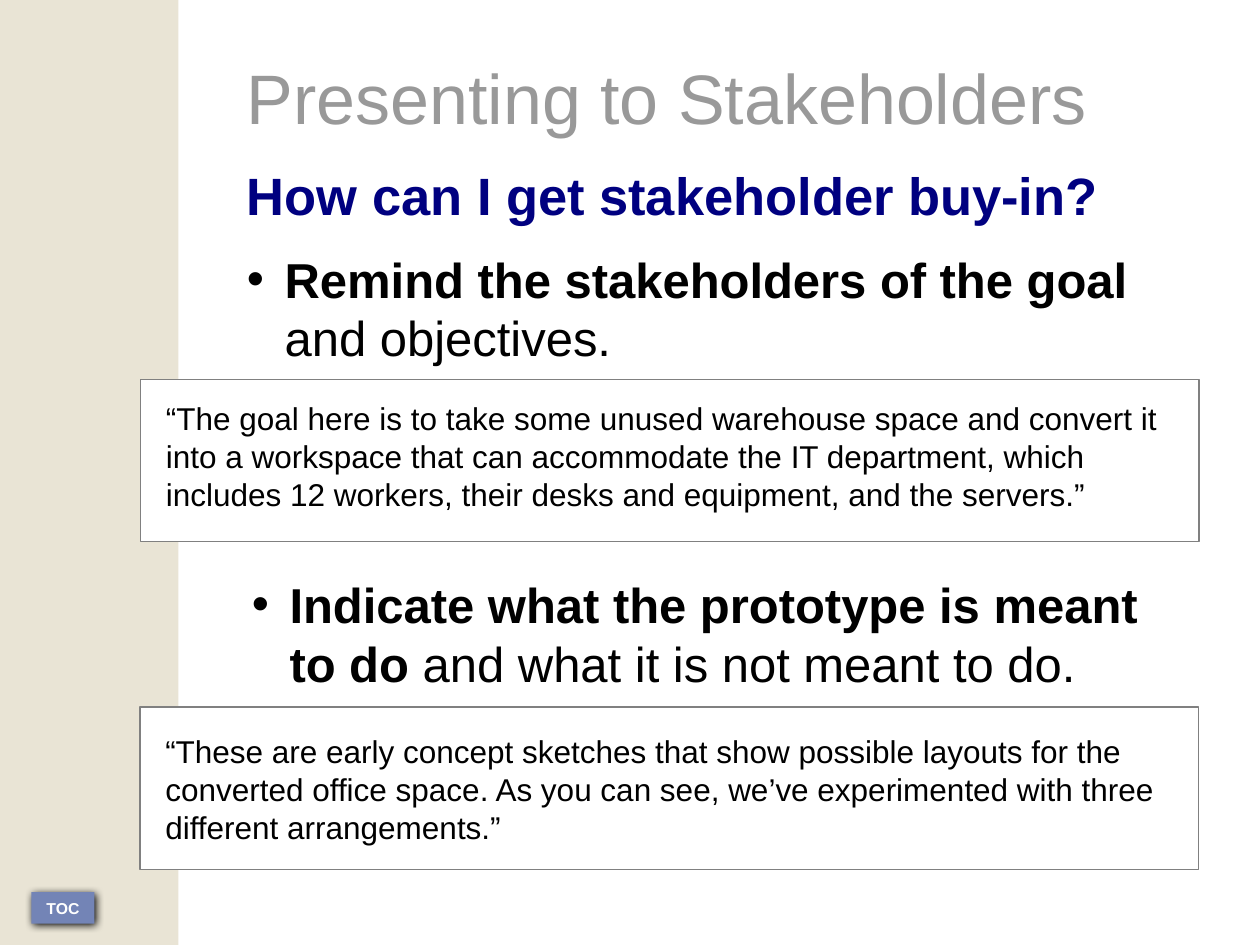
from lxml.etree import SubElement
from pptx import Presentation
from pptx.dml.color import RGBColor
from pptx.enum.shapes import MSO_SHAPE as Shape
from pptx.enum.text import MSO_ANCHOR as Anchor, PP_ALIGN as Align
from pptx.oxml.ns import qn
from pptx.util import Pt

WHITE = RGBColor(0xFF, 0xFF, 0xFF)
BLACK = RGBColor(0, 0, 0)
SAND = RGBColor(0xE9, 0xE4, 0xD5)
SLATE = RGBColor(0x73, 0x84, 0xB6)
GRAY = RGBColor(0x99, 0x99, 0x99)
BORDER = RGBColor(0x80, 0x80, 0x80)
NAVY = RGBColor(0, 0, 0x80)
FONT = "Arial"
INDENT = Pt(21.6)


def add_panel(page, kind, box, fill, border=None):
    """Add a flat filled shape, with a thin border if a colour is given."""
    panel = page.shapes.add_shape(kind, *map(Pt, box))
    panel.shadow.inherit = False
    panel.fill.solid()
    panel.fill.fore_color.rgb = fill
    if border is None:
        panel.line.fill.background()
    else:
        panel.line.color.rgb = border
        panel.line.width = Pt(0.71)
    return panel


def add_text_frame(page, box):
    """Add a wrapping text box and return its frame."""
    frame = page.shapes.add_textbox(*map(Pt, box)).text_frame
    frame.word_wrap = True
    return frame


def style(para, size, color, bold=None):
    """Set the font of a whole paragraph."""
    font = para.font
    font.name, font.size, font.bold = FONT, Pt(size), bold
    font.color.rgb = color


def hang(para, bullet=False):
    """Give a paragraph a hanging indent and, if wanted, a black bullet."""
    props = para._p.get_or_add_pPr()
    props.set("marL", str(INDENT))
    props.set("indent", str(-INDENT))
    if bullet:
        color = SubElement(props, qn("a:buClr"))
        SubElement(color, qn("a:srgbClr"), val=str(BLACK))
        SubElement(props, qn("a:buFont"), typeface=FONT)
        SubElement(props, qn("a:buChar"), char="•")
    else:
        SubElement(props, qn("a:buNone"))


def fill_point(para, lead, rest):
    """Write a bullet point that opens in bold."""
    hang(para, bullet=True)
    style(para, 28, BLACK)
    for text, bold in ((lead, True), (rest, False)):
        span = para.add_run()
        span.text = text
        span.font.bold = bold


def add_sidebar(page, box):
    """Draw the side band and its contents button."""
    left, top, width, height = box
    add_panel(page, Shape.RECTANGLE, box, SAND)
    button = add_panel(page, Shape.RECTANGLE, (left + 18, top + height - 30.2, 36, 18), SLATE)
    effects = button._element.spPr.find(qn("a:effectLst"))
    shadow = SubElement(effects, qn("a:outerShdw"), blurRad=str(Pt(5)), dist=str(Pt(1.4)),
                        dir="2700000", algn="ctr", rotWithShape="0")
    SubElement(shadow, qn("a:srgbClr"), val=str(BLACK))
    frame = button.text_frame
    frame.word_wrap = False
    frame.vertical_anchor = Anchor.MIDDLE
    para = frame.paragraphs[0]
    para.text = "TOC"
    para.alignment = Align.CENTER
    style(para, 9, WHITE, True)


def add_opening(page, box):
    """Write the title, the question and the first point."""
    frame = add_text_frame(page, box)
    title, question, point = frame.paragraphs[0], frame.add_paragraph(), frame.add_paragraph()
    for para, text, size, color, bold, after in (
        (title, "Presenting to Stakeholders", 40, GRAY, False, 14.4),
        (question, "How can I get stakeholder buy-in?", 30, NAVY, True, 5.8),
    ):
        para.text = text
        hang(para)
        style(para, size, color, bold)
        para.space_after = Pt(after)
    fill_point(point, "Remind the stakeholders of the goal", " and objectives.")
    point.space_before = Pt(7.2)


def add_point(page, box, lead, rest):
    """Write a single bullet point in its own box."""
    fill_point(add_text_frame(page, box).paragraphs[0], lead, rest)


def add_quote(page, box, text, drop):
    """Draw a bordered panel with a quote starting a given drop below its top."""
    left, top, width, height = box
    panel = add_panel(page, Shape.ROUNDED_RECTANGLE, box, WHITE, BORDER)
    panel.adjustments[0] = 0
    frame = add_text_frame(page, (left + 7.4, top + drop, width - 16, 72))
    para = frame.paragraphs[0]
    para.text = text
    style(para, 18, BLACK)


def main():
    """Build the deck and save it."""
    deck = Presentation()
    deck.slide_width, deck.slide_height = Pt(720), Pt(540)
    page = deck.slides.add_slide(deck.slide_layouts[6])
    add_sidebar(page, (0, 0, 102, 540))
    add_opening(page, (134, 27.4, 543, 203))
    add_quote(
        page, (80.4, 216.7, 604.8, 92.9),
        "“The goal here is to take some unused warehouse space and convert it into a workspace "
        "that can accommodate the IT department, which includes 12 workers, their desks and "
        "equipment, and the servers.”", 8)
    add_point(page, (136.8, 324.7, 543, 74.2),
              "Indicate what the prototype is meant to do", " and what it is not meant to do.")
    add_quote(
        page, (80, 404, 604.8, 92.9),
        "“These are early concept sketches that show possible layouts for the converted office "
        "space. As you can see, we’ve experimented with three different arrangements.”", 10.8)
    deck.save("out.pptx")


if __name__ == "__main__":
    main()
